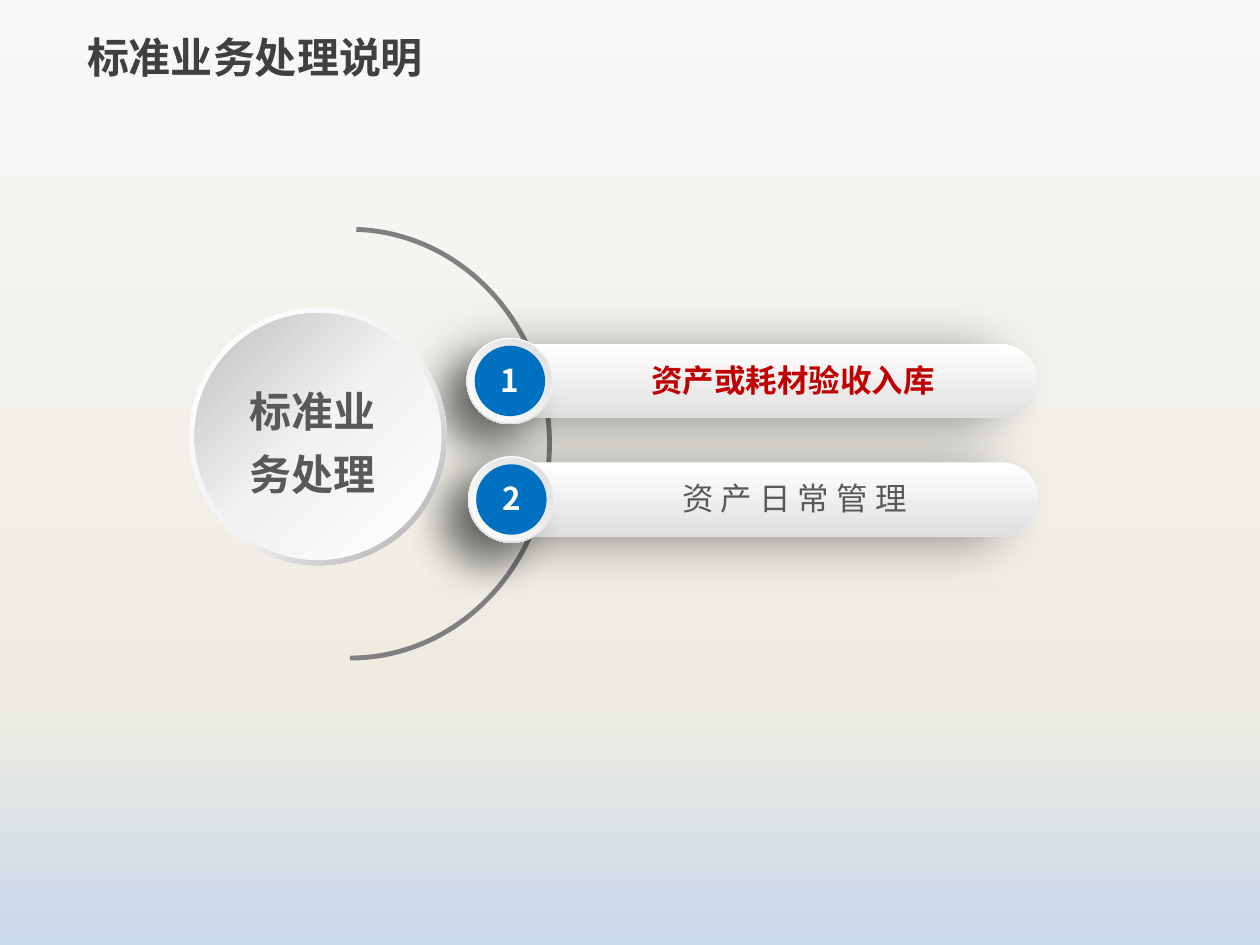
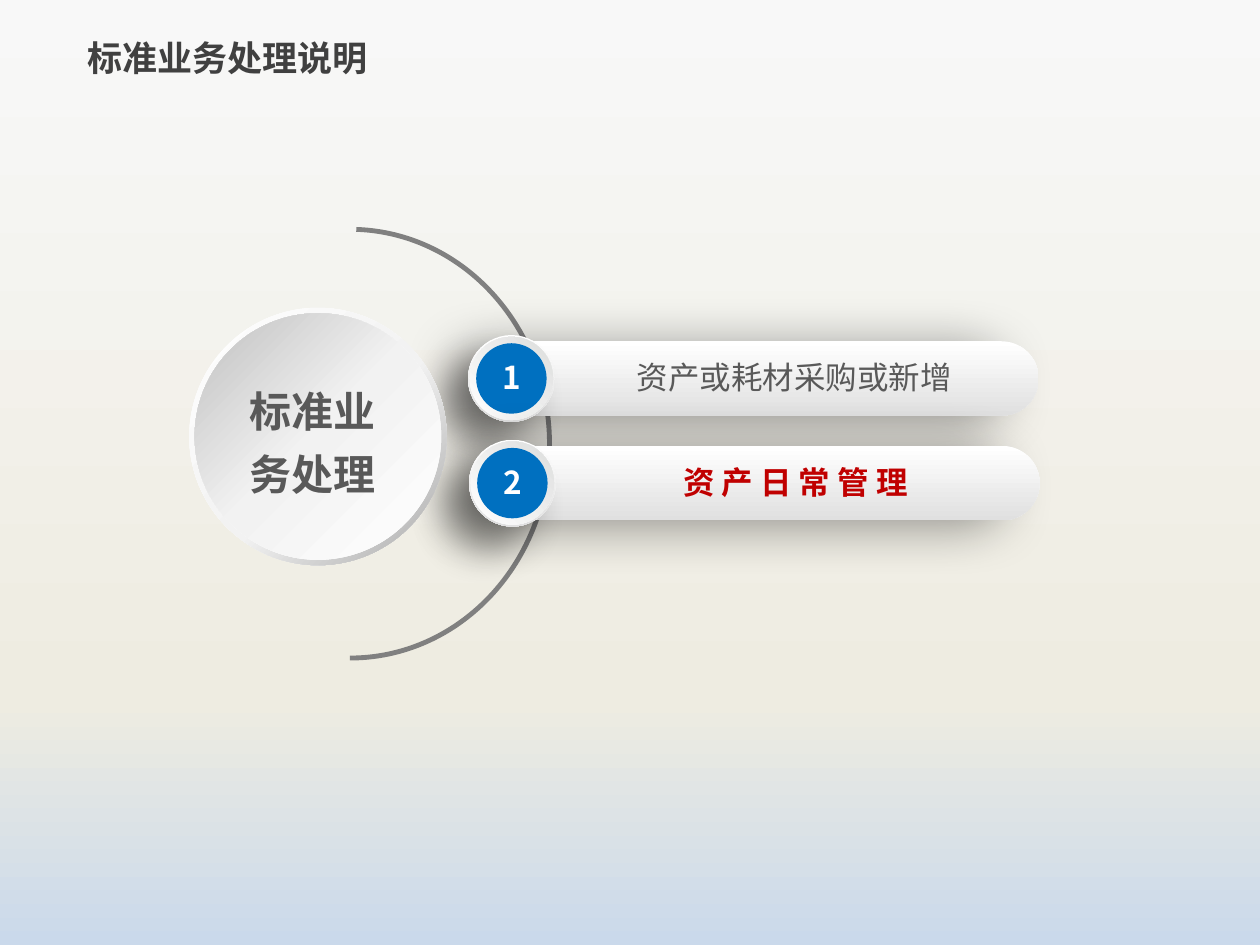
from pptx import Presentation
from pptx.dml.color import RGBColor
from pptx.enum.shapes import MSO_SHAPE
from pptx.enum.text import MSO_ANCHOR, MSO_AUTO_SIZE, PP_ALIGN
from pptx.oxml.ns import qn
from pptx.util import Cm, Pt
from lxml import etree

OVAL = MSO_SHAPE.OVAL
DONUT = MSO_SHAPE.DONUT
BLOCK_ARC = MSO_SHAPE.BLOCK_ARC
PILL = MSO_SHAPE.ROUNDED_RECTANGLE
CENTER, LEFT = PP_ALIGN.CENTER, PP_ALIGN.LEFT
MIDDLE = MSO_ANCHOR.MIDDLE
GROW = MSO_AUTO_SIZE.SHAPE_TO_FIT_TEXT

WHITE = RGBColor(0xFF, 0xFF, 0xFF)
BLACK = RGBColor(0x00, 0x00, 0x00)
BLUE = RGBColor(0x00, 0x70, 0xC0)
RED = RGBColor(0xC0, 0x00, 0x00)
TITLE_GREY = RGBColor(0x40, 0x40, 0x40)
TEXT_GREY = RGBColor(0x59, 0x59, 0x59)
ARC_GREY = RGBColor(0x80, 0x80, 0x80)
PALE_GREY = RGBColor(0xF2, 0xF2, 0xF2)
PILL_GREY = RGBColor(0xE0, 0xE0, 0xE0)
RING_GREY = RGBColor(0xDD, 0xDE, 0xDD)
RIM_GREY = RGBColor(0xA6, 0xA6, 0xA6)
DISC_GREY = RGBColor(0xBF, 0xBF, 0xBF)
SKY = [(0, RGBColor(0xF8, 0xF8, 0xF8)), (74, RGBColor(0xEE, 0xEC, 0xE1)),
       (100, RGBColor(0xCA, 0xD9, 0xEB))]
PILL_SHADE = [(0, WHITE), (100, PILL_GREY)]
RING_SHADE = [(0, WHITE), (100, RING_GREY)]
RIM_SHADE = [(0, WHITE), (55, PALE_GREY), (100, RIM_GREY)]
DISC_SHADE = [(0, WHITE), (51, PALE_GREY), (100, DISC_GREY)]

CJK_FONT = "Noto Sans CJK SC"
PILL_HEIGHT = 1.5
HUB_X, HUB_Y = 6.41, 8.8

# Title size, then each step: left and top of its pill, label, highlighted or not
SLIDES = [
    (24, [(9.78, 6.93, "资产或耗材验收入库", True),
          (9.81, 9.32, "资 产 日 常 管 理", False)]),
    (20, [(9.81, 6.88, "资产或耗材采购或新增", False),
          (9.83, 8.99, "资 产 日 常 管 理", True)]),
]


def add_color(parent, color, **modifiers):
    node = etree.SubElement(parent, qn("a:srgbClr"), val=str(color))
    for name, percent in modifiers.items():
        etree.SubElement(node, qn(f"a:{name}"), val=str(percent * 1000))


def paint_gradient(fill, owner, stops, angle):
    """Fill with (percent, colour) stops; the angle runs clockwise in degrees."""
    fill.gradient()
    gradient = next(owner.iter(qn("a:gradFill")))
    stop_list = gradient.find(qn("a:gsLst"))
    for default_stop in list(stop_list):
        stop_list.remove(default_stop)
    for percent, color in stops:
        stop = etree.SubElement(stop_list, qn("a:gs"), pos=str(percent * 1000))
        add_color(stop, color)
    gradient.find(qn("a:lin")).set("ang", str(angle * 60000))


def add_figure(shapes, kind, left, top, width, height, paint, angle=90):
    """Add a borderless shape; paint is one colour or a list of gradient stops."""
    figure = shapes.add_shape(kind, Cm(left), Cm(top), Cm(width), Cm(height))
    figure.shadow.inherit = False
    figure.line.fill.background()
    if isinstance(paint, list):
        paint_gradient(figure.fill, figure.element, paint, angle)
    else:
        figure.fill.solid()
        figure.fill.fore_color.rgb = paint
    return figure


def add_round(shapes, kind, center_x, center_y, size, paint, angle=90):
    return add_figure(shapes, kind, center_x - size / 2, center_y - size / 2,
                      size, size, paint, angle)


def cast_shadow(figure, blur, distance, direction):
    effects = figure.element.spPr.find(qn("a:effectLst"))
    shadow = etree.SubElement(
        effects, qn("a:outerShdw"), blurRad=str(Pt(blur)), dist=str(Pt(distance)),
        dir=str(direction * 60000), algn="ctr", rotWithShape="0")
    add_color(shadow, BLACK, alpha=40)


def style_text(frame, text, size, font, color, bold, align=CENTER):
    frame.text = text
    paragraph = frame.paragraphs[0]
    paragraph.alignment = align
    paragraph.font.name = font
    paragraph.font.size = Pt(size)
    paragraph.font.bold = bold
    paragraph.font.color.rgb = color
    defaults = next(paragraph._p.iter(qn("a:defRPr")))
    etree.SubElement(defaults, qn("a:ea"), typeface=CJK_FONT)
    return paragraph


def add_text(shapes, left, top, width, height, text, size, font, color, bold=True):
    box = shapes.add_textbox(Cm(left), Cm(top), Cm(width), Cm(height))
    box.text_frame.word_wrap = True
    box.text_frame.auto_size = GROW
    return style_text(box.text_frame, text, size, font, color, bold)


def add_step(slide, number, left, top, label, highlighted):
    shapes = slide.shapes.add_group_shape().shapes
    pill = add_figure(shapes, PILL, left, top, 11.13, PILL_HEIGHT, PILL_SHADE)
    pill.adjustments[0] = 0.5
    cast_shadow(pill, 30, 20, 171)

    badge_x, badge_y = left + 0.5, top + PILL_HEIGHT / 2
    badge = add_round(shapes, OVAL, badge_x, badge_y, 1.75, PILL_SHADE)
    cast_shadow(badge, 22, 20, 135)
    add_round(shapes, OVAL, badge_x, badge_y, 1.68, RING_SHADE, 315)
    add_round(shapes, OVAL, badge_x, badge_y, 1.42, BLUE)

    text_top = top + 0.22
    add_text(shapes, badge_x - 0.57, text_top, 1.14, 1.02, str(number), 18,
             CJK_FONT, WHITE)
    add_text(shapes, left + 2.75, text_top, 6.91, 1.02, label, 18, "Arial",
             RED if highlighted else TEXT_GREY, highlighted)


def add_arc(slide):
    arc = add_figure(slide.shapes, BLOCK_ARC, 2.69, 4.88, 8.74, 8.13, ARC_GREY)
    arc.rotation = 90
    for index, value in enumerate((108.97, 0.07, 0.012)):
        arc.adjustments[index] = value


def add_hub(slide):
    shapes = slide.shapes.add_group_shape().shapes
    rim = add_round(shapes, DONUT, HUB_X, HUB_Y, 5.19, RIM_SHADE, 45)
    rim.adjustments[0] = 0.05
    add_round(shapes, OVAL, HUB_X, HUB_Y, 4.97, DISC_SHADE, 225)
    caption = add_text(shapes, 4.5, 7.39, 3.61, 2.72, "标准业务处理", 24,
                       "Calibri", TEXT_GREY)
    caption.line_spacing = 1.25


def set_title(slide, size):
    title = slide.shapes.title
    title.left, title.top, title.width, title.height = (
        Cm(1.5), Cm(0.3), Cm(22.58), Cm(1.7))
    title.text_frame.vertical_anchor = MIDDLE
    style_text(title.text_frame, "标准业务处理说明", size, CJK_FONT, TITLE_GREY,
               True, LEFT)


def main():
    deck = Presentation()
    deck.slide_width, deck.slide_height = Cm(25.4), Cm(19.05)
    master = deck.slide_master
    paint_gradient(master.background.fill, master.element, SKY, 90)
    title_only = deck.slide_layouts.get_by_name("Title Only")

    for title_size, steps in SLIDES:
        slide = deck.slides.add_slide(title_only)
        set_title(slide, title_size)
        add_arc(slide)
        for number, step in enumerate(steps, start=1):
            add_step(slide, number, *step)
        add_hub(slide)

    deck.save("out.pptx")


if __name__ == "__main__":
    main()
